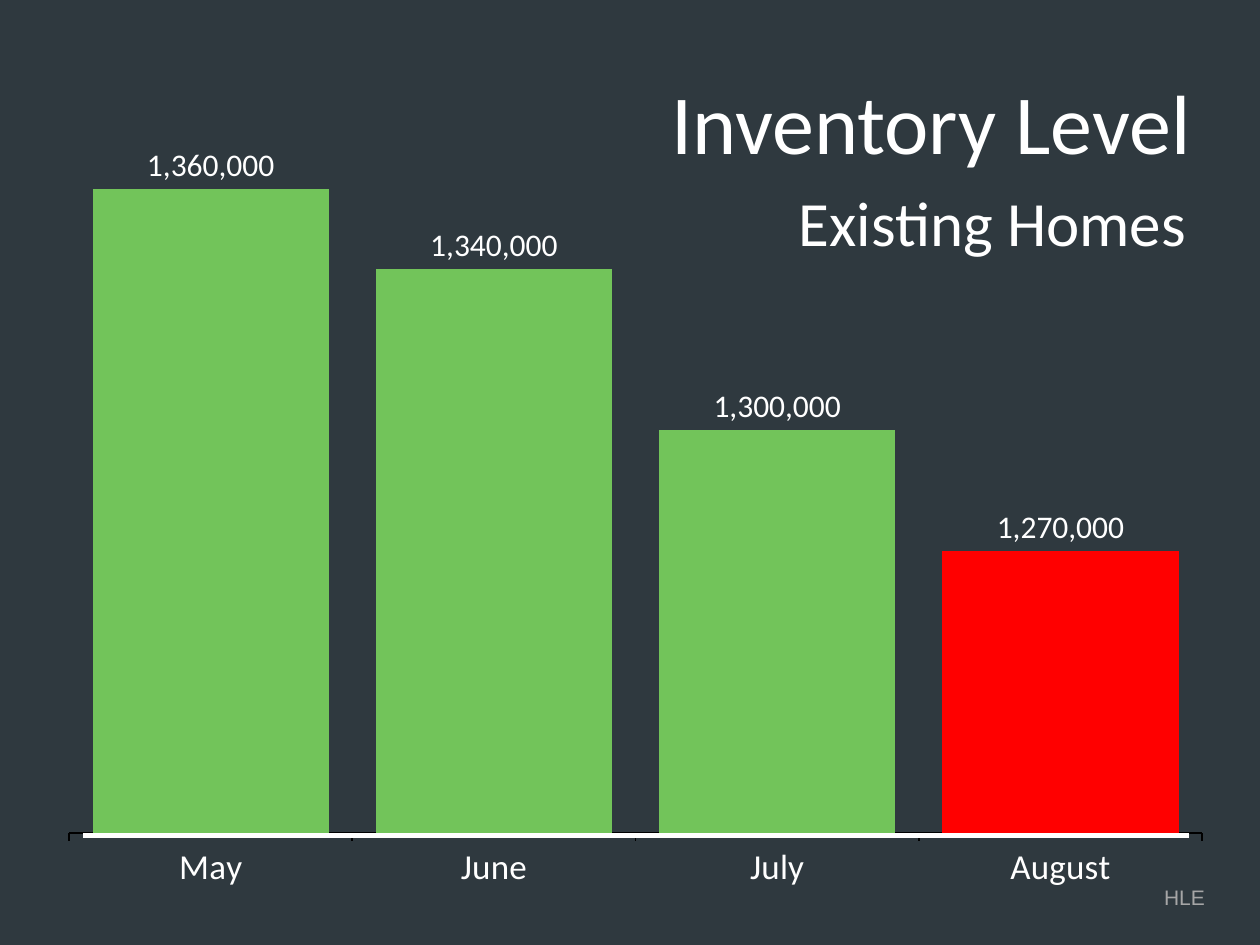
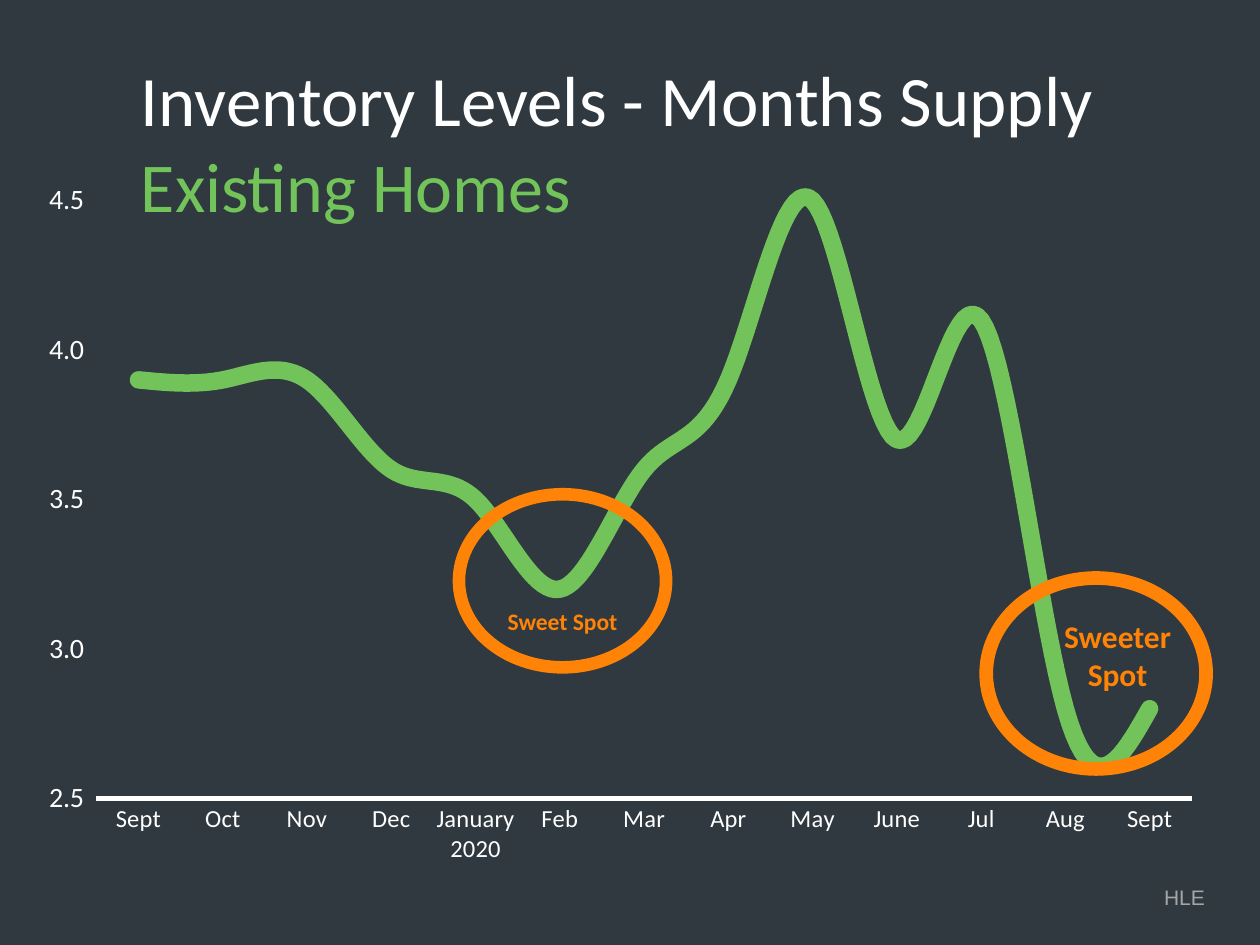
from dataclasses import dataclass

from lxml.etree import SubElement
from pptx import Presentation
from pptx.chart.data import CategoryChartData
from pptx.dml.color import RGBColor
from pptx.enum.chart import XL_CHART_TYPE as ChartType
from pptx.enum.chart import XL_LABEL_POSITION as LabelPosition
from pptx.enum.chart import XL_MARKER_STYLE as Marker
from pptx.enum.chart import XL_TICK_MARK as Tick
from pptx.enum.shapes import MSO_CONNECTOR as Connector
from pptx.enum.shapes import MSO_SHAPE as Shape
from pptx.enum.text import MSO_AUTO_SIZE as AutoSize
from pptx.enum.text import PP_ALIGN as Align
from pptx.oxml import parse_xml
from pptx.oxml.ns import nsdecls, qn
from pptx.util import Inches, Pt


@dataclass(frozen=True)
class Theme:
    background: str = "2F393F"
    white: str = "FFFFFF"
    black: str = "000000"
    green: str = "72C45A"
    red: str = "FF0000"
    orange: str = "FF8306"
    grey: str = "A6A6A6"
    font: str = "Calibri"
    source_font: str = "Arial"
    title: float = 48
    subtitle: float = 36
    long_title: float = 40.5
    long_subtitle: float = 40
    months: float = 20
    bar_labels: float = 18
    supply_months: float = 14
    supply_scale: float = 16
    source: float = 12


THEME = Theme()
WIDTH, HEIGHT = 10, 7.5
SOURCE = "HLE"

INVENTORY = {
    "May": 1360000,
    "June": 1340000,
    "July": 1300000,
    "August": 1270000,
}
MONTHS_SUPPLY = [
    ("Sept", 3.9), ("Oct", 3.9), ("Nov", 3.9), ("Dec", 3.6),
    ("January 2020", 3.5), ("Feb", 3.2), ("Mar", 3.6), ("Apr", 3.9),
    ("May", 4.5), ("June", 3.7), ("Jul", 4.1), ("Aug", 2.8), ("Sept", 2.8),
]
# Lines of text, text size, text box, ring box
SPOTS = [
    (["Sweet Spot"], 13.5, (3.6, 4.77, 1.73, 0.33), (3.6, 3.88, 1.73, 1.46)),
    (["Sweeter", "Spot"], 18, (7.95, 4.85, 1.84, 0.71), (7.78, 4.54, 1.84, 1.61)),
]


def rgb(color):
    return RGBColor.from_string(color)


def inches(box):
    return [Inches(length) for length in box]


def style_font(font, size, color, name=THEME.font, bold=False):
    font.size, font.name, font.bold = Pt(size), name, bold
    font.color.rgb = rgb(color)


def style_line(line, color, width):
    line.color.rgb = rgb(color)
    line.width = Pt(width)


def add_filled_shape(slide, kind, box, color):
    shape = slide.shapes.add_shape(kind, *inches(box))
    shape.shadow.inherit = False
    shape.fill.solid()
    shape.fill.fore_color.rgb = rgb(color)
    shape.line.fill.background()
    return shape


def add_text(slide, lines, box, size, color, name=THEME.font, bold=False,
             align=Align.LEFT, wrap=False):
    text_frame = slide.shapes.add_textbox(*inches(box)).text_frame
    text_frame.word_wrap = wrap
    text_frame.auto_size = AutoSize.SHAPE_TO_FIT_TEXT
    text_frame.text = "\n".join(lines)
    for paragraph in text_frame.paragraphs:
        paragraph.alignment = align
        for run in paragraph.runs:
            style_font(run.font, size, color, name, bold)


def add_base_slide(presentation):
    """Add a blank slide with the dark background."""
    slide = presentation.slides.add_slide(presentation.slide_layouts[6])
    add_filled_shape(slide, Shape.RECTANGLE, (0, 0, WIDTH, HEIGHT), THEME.background)
    return slide


def add_source(slide):
    add_text(slide, [SOURCE], (9.14, 6.97, 0.56, 0.3), THEME.source,
             THEME.grey, THEME.source_font)


def set_plot_area(chart, fractions):
    """Fix the inner plot area, as fractions of the chart's size."""
    plot_area = chart._chartSpace.chart.plotArea
    for layout in plot_area.findall(qn("c:layout")):
        plot_area.remove(layout)
    layout = parse_xml(f"<c:layout {nsdecls('c')}/>")
    manual = SubElement(layout, qn("c:manualLayout"))
    settings = [("layoutTarget", "inner"), ("xMode", "edge"), ("yMode", "edge")]
    settings += zip("xywh", fractions)
    for tag, value in settings:
        SubElement(manual, qn(f"c:{tag}"), val=str(value))
    plot_area.insert(0, layout)


def add_plain_chart(slide, kind, points, box, plot_area, scale, number_format):
    data = CategoryChartData(number_format=number_format)
    data.categories = [month for month, _ in points]
    data.add_series("Series 1", [value for _, value in points])
    chart = slide.shapes.add_chart(kind, *inches(box), data).chart
    chart.has_title = chart.has_legend = False
    chart.font.name = THEME.font
    chart.plots[0].vary_by_categories = False
    axis = chart.value_axis
    axis.minimum_scale, axis.maximum_scale = scale
    axis.has_major_gridlines = False
    axis.tick_labels.number_format = number_format
    axis.tick_labels.number_format_is_linked = False
    set_plot_area(chart, plot_area)
    return chart


def style_month_axis(chart, size, line_color, line_width, tick):
    axis = chart.category_axis
    axis.major_tick_mark = tick
    style_font(axis.tick_labels.font, size, THEME.white)
    style_line(axis.format.line, line_color, line_width)


def add_inventory_chart(slide):
    chart = add_plain_chart(
        slide, ChartType.COLUMN_CLUSTERED, list(INVENTORY.items()),
        (0.39, 0.22, 9.3, 7.05), (0.017, 0, 0.967, 0.907),
        (1200000, 1400000), "#,##0")
    chart.value_axis.visible = False
    style_month_axis(chart, THEME.months, THEME.black, 1, Tick.OUTSIDE)
    plot = chart.plots[0]
    plot.gap_width = 20
    series = plot.series[0]
    latest_bar = series.points[len(INVENTORY) - 1]
    for bar, color in ((series, THEME.green), (latest_bar, THEME.red)):
        bar.format.fill.solid()
        bar.format.fill.fore_color.rgb = rgb(color)
    labels = series.data_labels
    labels.show_value = True
    labels.position = LabelPosition.OUTSIDE_END
    labels.number_format = "#,##0"
    labels.number_format_is_linked = False
    style_font(labels.font, THEME.bar_labels, THEME.white)


def add_supply_chart(slide):
    chart = add_plain_chart(
        slide, ChartType.LINE, MONTHS_SUPPLY,
        (0.17, 1.13, 9.44, 6.23), (0.063, 0.036, 0.921, 0.8),
        (2.5, 4.6), "0.0")
    style_month_axis(chart, THEME.supply_months, THEME.white, 3, Tick.NONE)
    axis = chart.value_axis
    axis.major_unit = 0.5
    axis.format.line.fill.background()
    style_font(axis.tick_labels.font, THEME.supply_scale, THEME.white)
    series = chart.plots[0].series[0]
    series.smooth = True
    series.marker.style = Marker.NONE
    style_line(series.format.line, THEME.green, 10)
    series.format.line._ln.set("cap", "rnd")


def add_baseline(slide):
    line = slide.shapes.add_connector(
        Connector.STRAIGHT, *inches((0.66, 6.63, 9.44, 6.63)))
    style_line(line.line, THEME.white, 3)
    SubElement(line._element.spPr, qn("a:effectLst"))


def add_spot(slide, lines, size, text_box, ring_box):
    add_text(slide, lines, text_box, size, THEME.orange, bold=True,
             align=Align.CENTER, wrap=True)
    ring = add_filled_shape(slide, Shape.DONUT, ring_box, THEME.orange)
    ring.adjustments[0] = 0.059
    style_line(ring.line, THEME.orange, 1)


def build_inventory_slide(presentation):
    slide = add_base_slide(presentation)
    add_inventory_chart(slide)
    add_text(slide, ["Inventory Level"], (5.23, 0.51, 4.37, 0.91),
             THEME.title, THEME.white)
    add_text(slide, ["Existing Homes"], (6.24, 1.41, 3.31, 0.71),
             THEME.subtitle, THEME.white)
    add_baseline(slide)
    add_source(slide)


def build_supply_slide(presentation):
    slide = add_base_slide(presentation)
    add_text(slide, ["Inventory Levels - Months Supply"], (1.02, 0.39, 7.95, 0.78),
             THEME.long_title, THEME.white)
    add_supply_chart(slide)
    add_text(slide, ["Existing Homes"], (1.02, 1.08, 3.65, 0.77),
             THEME.long_subtitle, THEME.green)
    for spot in SPOTS:
        add_spot(slide, *spot)
    add_source(slide)


def main():
    presentation = Presentation()
    presentation.slide_width, presentation.slide_height = inches((WIDTH, HEIGHT))
    build_inventory_slide(presentation)
    build_supply_slide(presentation)
    presentation.save("out.pptx")


if __name__ == "__main__":
    main()
